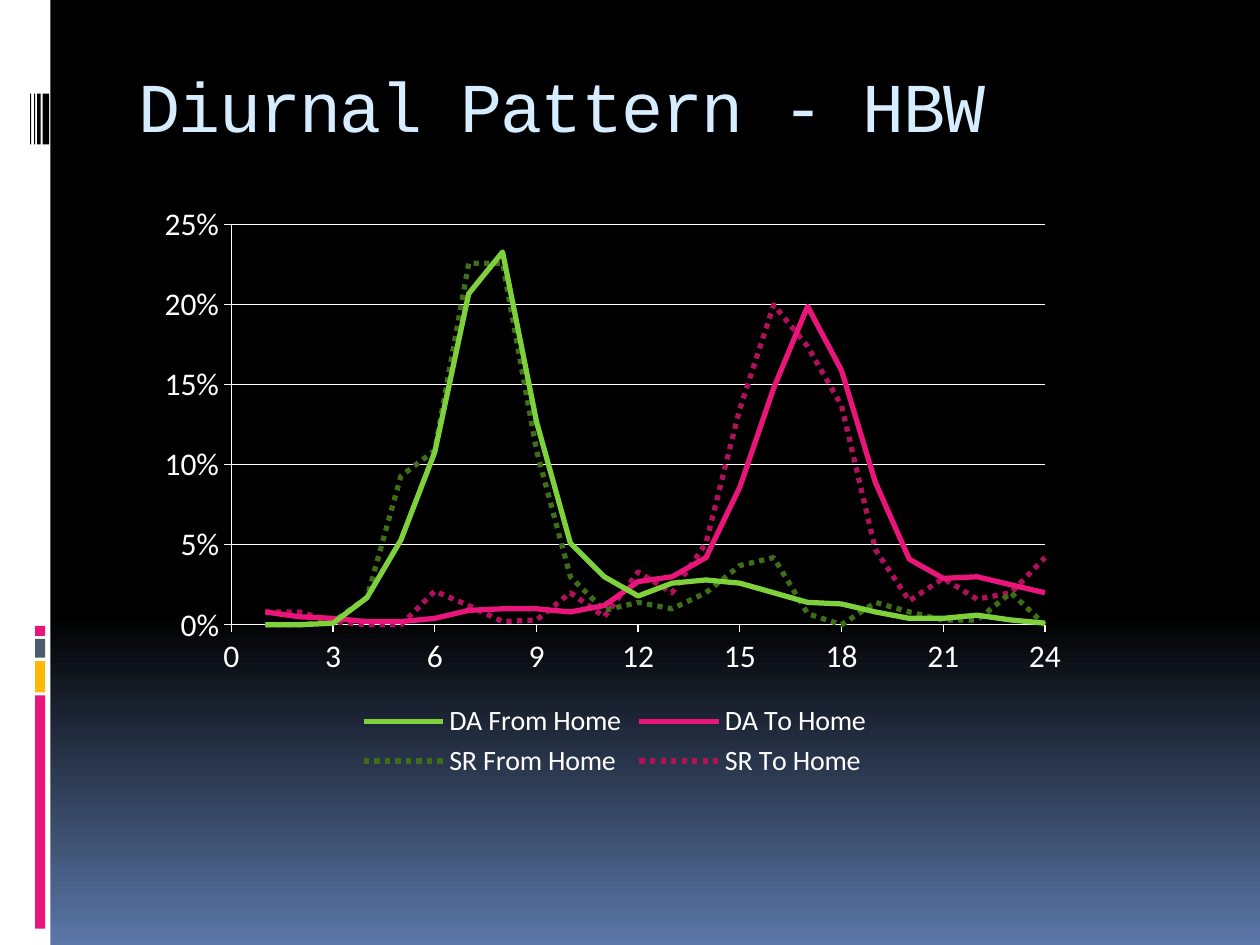
from copy import deepcopy

from pptx import Presentation
from pptx.chart.data import XyChartData
from pptx.dml.color import RGBColor
from pptx.enum.chart import XL_CHART_TYPE, XL_LEGEND_POSITION, XL_MARKER_STYLE, XL_TICK_MARK
from pptx.enum.dml import MSO_LINE
from pptx.enum.shapes import MSO_SHAPE
from pptx.enum.text import MSO_ANCHOR, PP_ALIGN
from pptx.oxml import parse_xml
from pptx.oxml.ns import nsdecls, qn
from pptx.util import Cm, Pt

RECT = MSO_SHAPE.RECTANGLE
LINES = XL_CHART_TYPE.XY_SCATTER_LINES_NO_MARKERS
BOTTOM = XL_LEGEND_POSITION.BOTTOM
NO_MARKER = XL_MARKER_STYLE.NONE
OUTSIDE, NO_TICK = XL_TICK_MARK.OUTSIDE, XL_TICK_MARK.NONE
DOTTED = MSO_LINE.ROUND_DOT
MIDDLE, LEFT = MSO_ANCHOR.MIDDLE, PP_ALIGN.LEFT

BLACK = RGBColor(0x00, 0x00, 0x00)
WHITE = RGBColor(0xFF, 0xFF, 0xFF)
BLUE = RGBColor(0x5B, 0x77, 0xA8)
PALE_BLUE = RGBColor(0xD6, 0xEC, 0xFF)
SLATE = RGBColor(0x4E, 0x5B, 0x6F)
AMBER = RGBColor(0xFE, 0xB8, 0x0A)
PINK = RGBColor(0xEA, 0x15, 0x7A)
DARK_PINK = RGBColor(0xB0, 0x10, 0x5C)
GREEN = RGBColor(0x7F, 0xD1, 0x3B)
DARK_GREEN = RGBColor(0x3F, 0x6D, 0x19)

prs = Presentation()
prs.slide_width, prs.slide_height = Cm(25.4), Cm(19.05)
s = prs.slides.add_slide(prs.slide_layouts[5])

# Background: black down to 65 %, then fading to blue
fill = s.background.fill
fill.gradient()
fill.gradient_angle = 270
first_stop = s.element.find(".//" + qn("a:gs"))
first_stop.addnext(deepcopy(first_stop))
for stop, position, color in zip(fill.gradient_stops, (0, 0.65, 1), (BLACK, BLACK, BLUE)):
    stop.position = position
    stop.color.rgb = color

# Side strip with coloured blocks and bars: left, top, width, height, colour
strip = [
    (0, 0, 1.02, 19.05, WHITE),
    (0.71, 14.02, 0.2, 4.7, PINK),
    (0.71, 13.33, 0.2, 0.63, AMBER),
    (0.71, 12.88, 0.2, 0.38, SLATE),
    (0.71, 12.62, 0.2, 0.2, PINK),
]
for left, width in ((0.86, 0.13), (0.75, 0.07), (0.69, 0.02), (0.61, 0.02)):
    strip.append((left, 1.89, width, 1.02, BLACK))
for left, top, width, height, color in strip:
    sp = s.shapes.add_shape(RECT, Cm(left), Cm(top), Cm(width), Cm(height))
    sp.shadow.inherit = False
    sp.fill.solid()
    sp.fill.fore_color.rgb = color
    sp.line.fill.background()

# Title
title = s.shapes.title
title.left, title.top, title.width, title.height = Cm(2.54), Cm(0.84), Cm(21.59), Cm(2.54)
tf = title.text_frame
tf.text = "Diurnal Pattern - HBW"
tf.vertical_anchor = MIDDLE
p = tf.paragraphs[0]
p.alignment = LEFT
p.font.name, p.font.size = "Courier New", Pt(40)
p.font.color.rgb = PALE_BLUE
p.runs[0].font._element.set("spc", "-100")

# Share of trips by hour of day, in percent
series = [
    ("DA From Home", GREEN, False,
     [0, 0, 0.1, 1.7, 5.3, 10.8, 20.7, 23.3, 12.7, 5.1, 3, 1.8,
      2.6, 2.8, 2.6, 2, 1.4, 1.3, 0.8, 0.4, 0.4, 0.6, 0.3, 0.1]),
    ("DA To Home", PINK, False,
     [0.8, 0.5, 0.4, 0.2, 0.2, 0.4, 0.9, 1, 1, 0.8, 1.2, 2.7,
      3, 4.2, 8.6, 14.8, 19.9, 15.9, 8.9, 4.1, 2.9, 3, 2.5, 2]),
    ("SR From Home", DARK_GREEN, True,
     [0, 0, 0.2, 1.7, 9.3, 10.9, 22.6, 22.6, 10.9, 3, 0.9, 1.4,
      1, 2, 3.7, 4.2, 0.7, 0, 1.4, 0.8, 0.3, 0.3, 2, 0]),
    ("SR To Home", DARK_PINK, True,
     [0.8, 0.8, 0.2, 0, 0, 2.1, 1.2, 0.2, 0.3, 2, 0.5, 3.3,
      2, 5.1, 13.5, 20, 17.4, 13.7, 4.7, 1.5, 2.9, 1.6, 2, 4.2]),
]
data = XyChartData()
for name, color, dotted, shares in series:
    points = data.add_series(name)
    for hour, share in enumerate(shares, start=1):
        points.add_data_point(hour, round(share / 100, 3))

chart = s.shapes.add_chart(LINES, Cm(2.97), Cm(3.94), Cm(18.85), Cm(11.86), data).chart
chart.has_title = False
chart.font.name, chart.font.size = "Calibri", Pt(10)
chart.font.color.rgb = WHITE

# Series lines
for plotted, (name, color, dotted, shares) in zip(chart.plots[0].series, series):
    plotted.smooth = False
    plotted.marker.style = NO_MARKER
    line = plotted.format.line
    line.width = Pt(3)
    line.color.rgb = color
    if dotted:
        line.dash_style = DOTTED

# Axes and gridlines
hours, shares_axis = chart.category_axis, chart.value_axis
for axis, top, step, number_format in (
    (hours, 24, 3, "General"),
    (shares_axis, 0.25, 0.05, "0%"),
):
    axis.minimum_scale, axis.maximum_scale, axis.major_unit = 0, top, step
    axis.major_tick_mark, axis.minor_tick_mark = OUTSIDE, NO_TICK
    axis.format.line.color.rgb = WHITE
    axis.format.line.width = Pt(0.75)
    labels = axis.tick_labels
    labels.number_format, labels.number_format_is_linked = number_format, False
    labels.font.name, labels.font.size = "Calibri", Pt(18)
    labels.font.color.rgb = WHITE
hours.has_major_gridlines = False
shares_axis.has_major_gridlines = True
grid = shares_axis.major_gridlines.format.line
grid.color.rgb = WHITE
grid.width = Pt(0.75)

# Legend
chart.has_legend = True
legend = chart.legend
legend.position, legend.include_in_layout = BOTTOM, False
legend.font.name, legend.font.size = "Calibri", Pt(16)
legend.font.color.rgb = WHITE

# Plot area position as fractions of the chart
plot_area = chart.element.find(".//" + qn("c:plotArea"))
for layout in plot_area.findall(qn("c:layout")):
    plot_area.remove(layout)
plot_area.insert(0, parse_xml(
    f'<c:layout {nsdecls("c")}><c:manualLayout><c:layoutTarget val="inner"/>'
    '<c:xMode val="edge"/><c:yMode val="edge"/><c:x val="0.09"/><c:y val="0.05"/>'
    '<c:w val="0.87"/><c:h val="0.68"/></c:manualLayout></c:layout>'))

prs.save("out.pptx")
